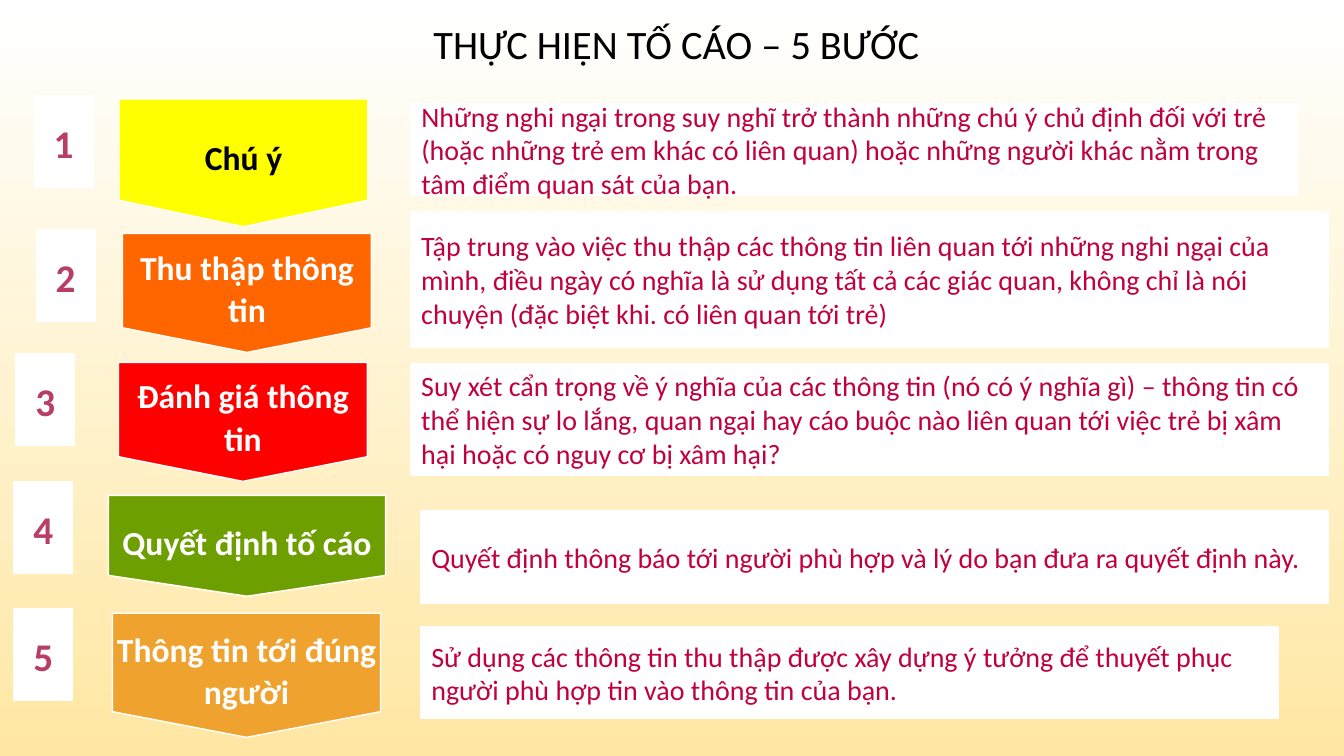
from pptx import Presentation
from pptx.dml.color import RGBColor
from pptx.enum import shapes, text
from pptx.util import Pt

WHITE = RGBColor(0xFF, 0xFF, 0xFF)
BLACK = RGBColor(0x00, 0x00, 0x00)
CREAM = RGBColor(0xFF, 0xE7, 0xA3)
YELLOW = RGBColor(0xFF, 0xFF, 0x00)
ORANGE = RGBColor(0xFF, 0x66, 0x00)
RED = RGBColor(0xFF, 0x00, 0x00)
GREEN = RGBColor(0x6D, 0x9F, 0x00)
AMBER = RGBColor(0xF0, 0xA2, 0x2E)
CRIMSON = RGBColor(0xC0, 0x00, 0x40)
ROSE = RGBColor(0xB8, 0x3D, 0x68)

PLATE = shapes.MSO_SHAPE.PENTAGON
CENTER = text.PP_ALIGN.CENTER


def write(box, words, align, spacing, **style):
    frame = box.text_frame
    frame.word_wrap = True
    frame.auto_size = text.MSO_AUTO_SIZE.NONE
    frame.vertical_anchor = text.MSO_ANCHOR.MIDDLE
    para = frame.paragraphs[0]
    para.alignment = align
    para.line_spacing = spacing
    span = para.add_run()
    span.text = words
    span.font.color.rgb = style.pop("color")
    for name, value in {"name": "Calibri", **style}.items():
        setattr(span.font, name, value)


def add_box(kind, place, fill, line_width, margin=None):
    box = page.shapes.add_shape(kind, *[Pt(length) for length in place])
    box.shadow.inherit = False
    box.fill.solid()
    box.fill.fore_color.rgb = fill
    box.line.color.rgb = WHITE
    box.line.width = Pt(line_width)
    if margin is not None:
        for side in ("left", "top", "right", "bottom"):
            setattr(box.text_frame, f"margin_{side}", Pt(margin))
    return box


deck = Presentation()
deck.slide_width, deck.slide_height = Pt(960), Pt(540)
page = deck.slides.add_slide(deck.slide_layouts[5])

backdrop = page.background.fill
backdrop.gradient()
backdrop.gradient_angle = 270
for stop, color in zip(backdrop.gradient_stops, (WHITE, CREAM)):
    stop.color.rgb = color

title = page.shapes.title
title_place = {"left": 6.5, "top": 15.8, "width": 953.3, "height": 34.6}
for name, value in title_place.items():
    setattr(title, name, Pt(value))
write(title, "THỰC HIỆN TỐ CÁO – 5 BƯỚC", CENTER, 0.9, size=Pt(28.8), color=BLACK)

steps = [
    ("Chú ý", YELLOW, BLACK, (85, 70.6, 177.8, 91.4), (24.5, 68.4),
     (293.8, 74.2, 632.9, 65.5),
     "Những nghi ngại trong suy nghĩ trở thành những chú ý chủ định đối với trẻ "
     "(hoặc những trẻ em khác có liên quan) hoặc những người khác nằm trong "
     "tâm điểm quan sát của bạn."),
    ("Thu thập thông tin", ORANGE, WHITE, (87.5, 166.7, 177.8, 85), (25.9, 164.2),
     (293.8, 151.2, 655.2, 96.5),
     "Tập trung vào việc thu thập các thông tin liên quan tới những nghi ngại của "
     "mình, điều ngày có nghĩa là sử dụng tất cả các giác quan, không chỉ là nói "
     "chuyện (đặc biệt khi. có liên quan tới trẻ)"),
    ("Đánh giá thông tin", RED, WHITE, (84.6, 258.8, 177.8, 85), (11.5, 252.7),
     (293.8, 259.9, 655.2, 79.2),
     "Suy xét cẩn trọng về ý nghĩa của các thông tin (nó có ý nghĩa gì) – thông tin có "
     "thể hiện sự lo lắng, quan ngại hay cáo buộc nào liên quan tới việc trẻ bị xâm "
     "hại hoặc có nguy cơ bị xâm hại?"),
    ("Quyết định tố cáo", GREEN, WHITE, (77.4, 353.9, 198, 72), (10.1, 344.2),
     (301, 365, 648, 65.5),
     "Quyết định thông báo tới người phù hợp và lý do bạn đưa ra quyết định này."),
    ("Thông tin tới đúng người", AMBER, WHITE, (80.3, 438.1, 191.5, 88.6), (10.1, 434.9),
     (301, 447.8, 612, 65.5),
     "Sử dụng các thông tin thu thập được xây dựng ý tưởng để thuyết phục "
     "người phù hợp tin vào thông tin của bạn."),
]

for number, step in enumerate(steps, 1):
    label, fill, ink, (left, top, width, height), corner, note_place, detail = step

    shift = (width - height) / 2
    arrow = add_box(PLATE, (left + shift, top - shift, height, width), fill, 1, 2.9)
    arrow.rotation = 90
    arrow.adjustments[0] = 0.207
    arrow.text_frame._txBody.bodyPr.set("vert", "vert270")
    write(arrow, label, CENTER, 1.06, size=Pt(24), bold=True, color=ink)

    note = add_box(shapes.MSO_SHAPE.RECTANGLE, note_place, WHITE, 1.25)
    write(note, detail, text.PP_ALIGN.LEFT, 1.0, size=Pt(20), color=CRIMSON)

    badge = add_box(PLATE, (*corner, 41.8, 65.5), WHITE, 1, 2.9)
    badge.adjustments[0] = 0
    write(badge, str(number), CENTER, 1.06, size=Pt(28), bold=True, color=ROSE)

deck.save("out.pptx")
